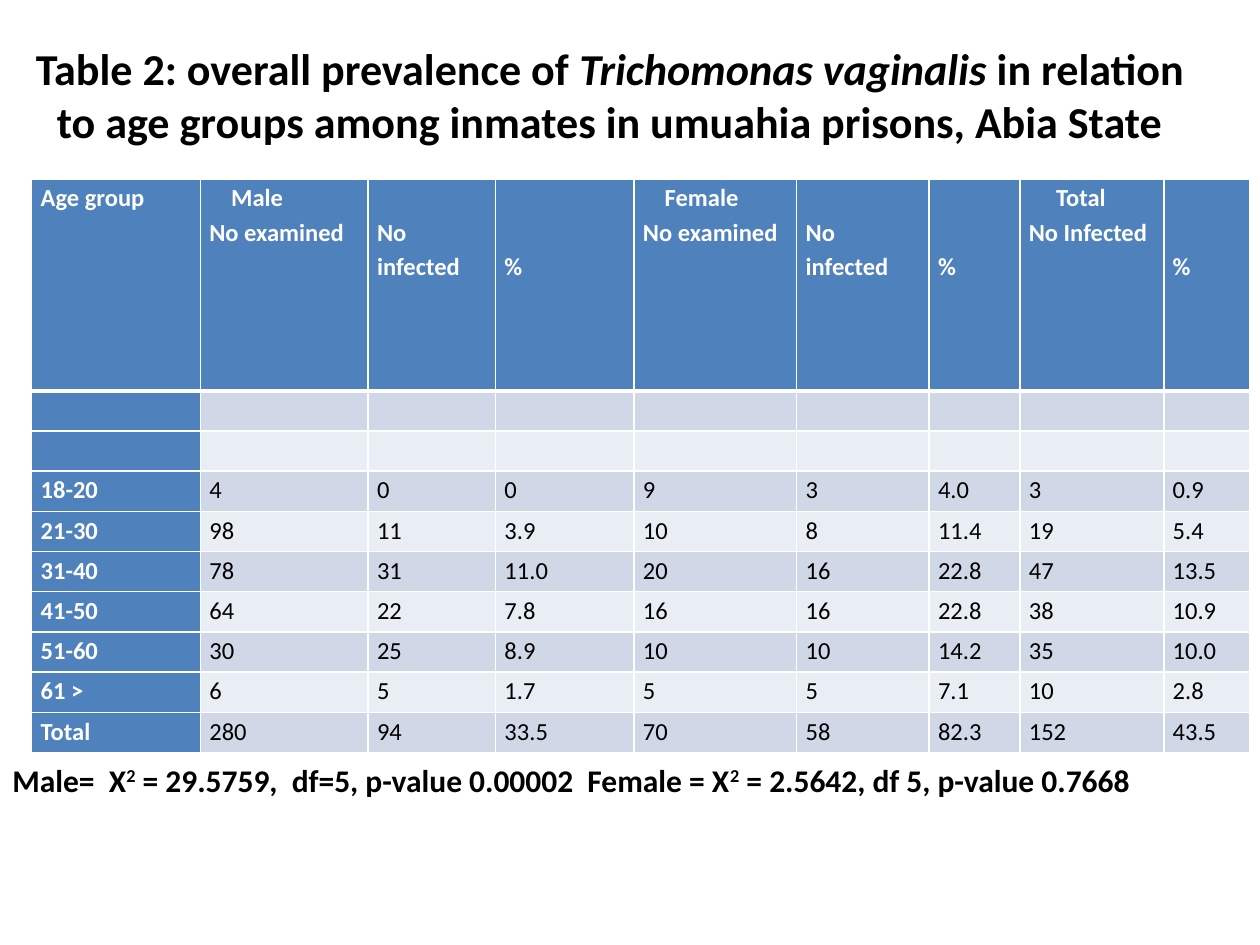
from dataclasses import dataclass

from lxml import etree
from pptx import Presentation
from pptx.dml.color import RGBColor
from pptx.enum.text import MSO_ANCHOR, MSO_AUTO_SIZE, PP_ALIGN
from pptx.oxml.ns import qn
from pptx.util import Cm, Pt

CENTER = PP_ALIGN.CENTER
MIDDLE = MSO_ANCHOR.MIDDLE
NO_AUTOFIT = MSO_AUTO_SIZE.NONE
TITLE_ONLY = 5


@dataclass(frozen=True)
class Theme:
    """Colours, type sizes and line widths of the slide."""
    font: str = "Calibri"
    text: str = "000000"
    inverse: str = "FFFFFF"
    accent: str = "4F81BD"
    bands: tuple = ("D0D8E8", "E9EDF4")
    title_size: float = 25.2
    table_size: float = 14
    note_size: float = 18
    line_spacing: float = 1.15
    thin: float = 1
    thick: float = 3


@dataclass(frozen=True)
class Box:
    """A rectangle in centimetres."""
    left: float
    top: float
    width: float
    height: float

    def lengths(self):
        """Return the four sides as slide lengths."""
        return Cm(self.left), Cm(self.top), Cm(self.width), Cm(self.height)


THEME = Theme()
HEADER_LINE = 0.69
COLUMN_WIDTHS = (3.4, 3.38, 2.57, 2.79, 3.28, 2.67, 1.83, 2.9, 1.73)
HEADER_HEIGHT = 4.27
ROW_HEIGHT = 0.81
HEADERS = (
    (("Age group",), 0, 0),
    (("Male", "No examined"), 0, 0.44),
    (("No infected",), 1, 0),
    (("%",), 2, 0),
    (("Female", "No examined"), 0, 0.44),
    (("No infected",), 1, 0),
    (("%",), 2, 0),
    (("Total", "No Infected"), 0, 0.55),
    (("%",), 2, 0),
)
ROWS = (
    ("",) * 9,
    ("",) * 9,
    ("18-20", "4", "0", "0", "9", "3", "4.0", "3", "0.9"),
    ("21-30", "98", "11", "3.9", "10", "8", "11.4", "19", "5.4"),
    ("31-40", "78", "31", "11.0", "20", "16", "22.8", "47", "13.5"),
    ("41-50", "64", "22", "7.8", "16", "16", "22.8", "38", "10.9"),
    ("51-60", "30", "25", "8.9", "10", "10", "14.2", "35", "10.0"),
    ("61 >", "6", "5", "1.7", "5", "5", "7.1", "10", "2.8"),
    ("Total", "280", "94", "33.5", "70", "58", "82.3", "152", "43.5"),
)
TITLE = (
    ("Table 2: overall prevalence of ", False),
    ("Trichomonas vaginalis", True),
    (" in relation to age groups among inmates in umuahia prisons, Abia State", False),
)
NOTE = (
    ("Male=  X", False),
    ("2", True),
    (" = 29.5759,  df=5, p-value 0.00002  Female = X", False),
    ("2", True),
    (" = 2.5642, df 5, p-value 0.7668", False),
)


def style_font(font, size, color, bold):
    """Apply the theme typeface with a size, colour and weight."""
    font.name = THEME.font
    font.size = Pt(size)
    font.bold = bold
    font.color.rgb = RGBColor.from_string(color)


def add_run(paragraph, text, size):
    """Append a bold run and return it."""
    run = paragraph.add_run()
    run.text = text
    style_font(run.font, size, THEME.text, True)
    return run


def set_borders(cell, top, bottom):
    """Draw white cell borders with the given top and bottom widths."""
    properties = cell._tc.get_or_add_tcPr()
    widths = {"lnL": THEME.thin, "lnR": THEME.thin, "lnT": top, "lnB": bottom}
    for index, (tag, width) in enumerate(widths.items()):
        line = etree.Element(qn(f"a:{tag}"), w=str(Pt(width)))
        fill = etree.SubElement(line, qn("a:solidFill"))
        etree.SubElement(fill, qn("a:srgbClr"), val=THEME.inverse)
        properties.insert(index, line)


def fill_cell(cell, lines, fill, color, bold):
    """Write the lines of a table cell and format it."""
    cell.margin_left = cell.margin_right = Cm(0.18)
    cell.margin_top = cell.margin_bottom = 0
    cell.fill.solid()
    cell.fill.fore_color.rgb = RGBColor.from_string(fill)
    if not any(lines):
        return
    cell.text_frame.text = "\n".join(lines)
    for paragraph in cell.text_frame.paragraphs:
        paragraph.line_spacing = THEME.line_spacing
        for run in paragraph.runs:
            style_font(run.font, THEME.table_size, color, bold)


def place_title(slide, box):
    """Fill the title placeholder within the box."""
    title = slide.shapes.title
    title.left, title.top, title.width, title.height = box.lengths()
    frame = title.text_frame
    frame.word_wrap = True
    frame.auto_size = NO_AUTOFIT
    frame.vertical_anchor = MIDDLE
    frame.margin_top = Cm(0.33)
    paragraph = frame.paragraphs[0]
    paragraph.alignment = CENTER
    for text, italic in TITLE:
        add_run(paragraph, text, THEME.title_size).font.italic = italic


def place_table(slide, box):
    """Build the prevalence table within the box."""
    shape = slide.shapes.add_table(len(ROWS) + 1, len(HEADERS), *box.lengths())
    table = shape.table
    table.first_col = True
    for column, width in zip(table.columns, COLUMN_WIDTHS):
        column.width = Cm(width)
    for row in table.rows:
        row.height = Cm(ROW_HEIGHT)
    table.rows[0].height = Cm(HEADER_HEIGHT)

    for column, (lines, lines_down, indent) in enumerate(HEADERS):
        cell = table.cell(0, column)
        fill_cell(cell, lines, THEME.accent, THEME.inverse, True)
        cell.margin_top = Cm(lines_down * HEADER_LINE)
        first = cell.text_frame.paragraphs[0]
        first._p.get_or_add_pPr().set("marL", str(Cm(indent)))
        set_borders(cell, THEME.thin, THEME.thick)

    for row, values in enumerate(ROWS, start=1):
        band = THEME.bands[(row - 1) % 2]
        top = THEME.thick if row == 1 else THEME.thin
        for column, value in enumerate(values):
            cell = table.cell(row, column)
            is_label = column == 0
            fill = THEME.accent if is_label else band
            color = THEME.inverse if is_label else THEME.text
            fill_cell(cell, (value,), fill, color, is_label)
            set_borders(cell, top, THEME.thin)


def place_note(slide, box):
    """Write the test statistics within the box."""
    frame = slide.shapes.add_textbox(*box.lengths()).text_frame
    frame.word_wrap = True
    paragraph = frame.paragraphs[0]
    for text, raised in NOTE:
        run = add_run(paragraph, text, THEME.note_size)
        if raised:
            run._r.get_or_add_rPr().set("baseline", "30000")


def main():
    """Build and save the presentation."""
    presentation = Presentation()
    presentation.slide_width = Cm(25.4)
    presentation.slide_height = Cm(19.05)
    slide = presentation.slides.add_slide(presentation.slide_layouts[TITLE_ONLY])
    place_title(slide, Box(0.33, 0, 23.93, 3.61))
    place_table(slide, Box(0.64, 3.61, 24.55, 11.56))
    place_note(slide, Box(0, 15.21, 23.93, 1.8))
    presentation.save("out.pptx")


if __name__ == "__main__":
    main()
